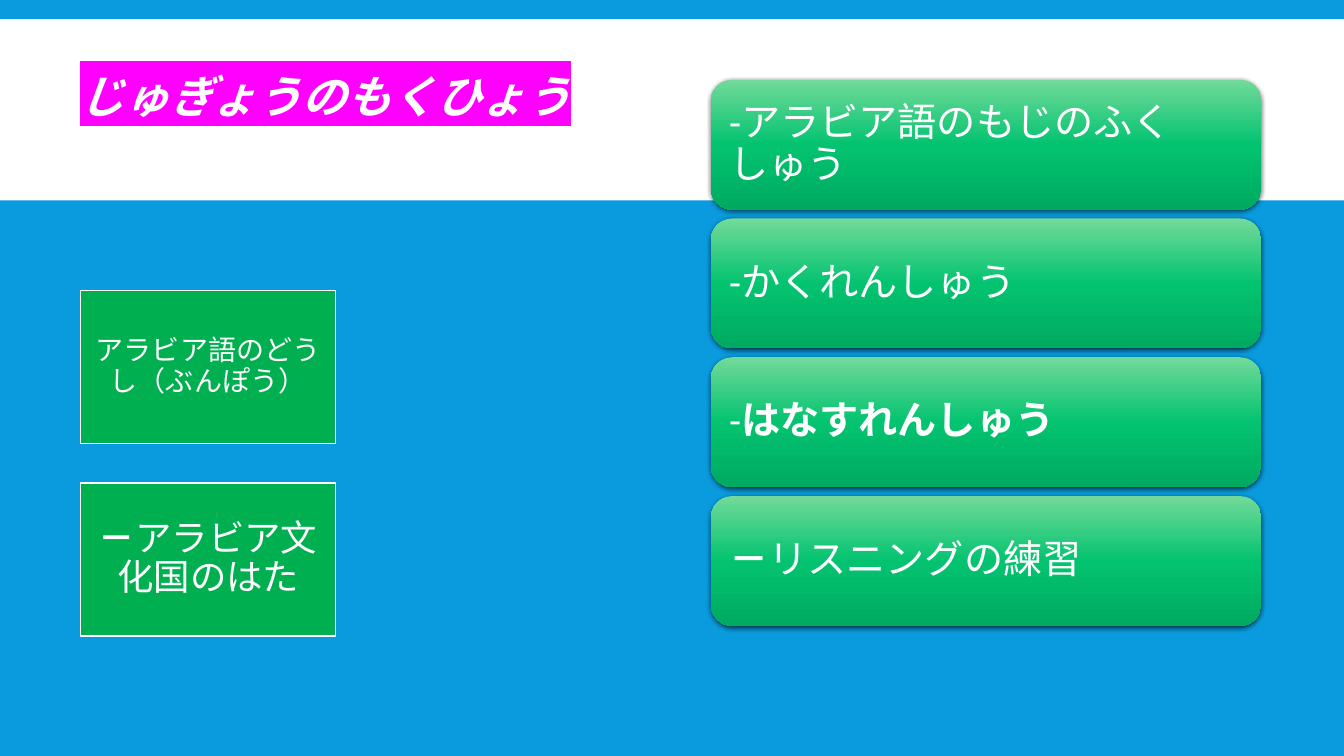
from copy import deepcopy
from dataclasses import dataclass

from lxml.etree import SubElement
from pptx import Presentation
from pptx.dml.color import RGBColor
from pptx.enum.shapes import MSO_SHAPE as Shape
from pptx.enum.text import MSO_ANCHOR as Anchor, PP_ALIGN as Align
from pptx.oxml.ns import qn
from pptx.util import Inches, Pt

COLOURS = {
    "sky": "099BDD", "white": "FFFFFF", "magenta": "FF00FF", "green": "00B050",
    "mint": "72DA9A", "emerald": "03C370", "forest": "00AA61", "black": "000000",
}
FONT = "Calibri"
WIDTH, HEIGHT = Inches(13.33), Inches(7.5)


@dataclass(frozen=True)
class Box:
    """Place and size in percent of the slide's width and height."""
    left: float
    top: float
    width: float
    height: float

    def emu(self) -> tuple[int, int, int, int]:
        return (int(self.left * WIDTH / 100), int(self.top * HEIGHT / 100),
                int(self.width * WIDTH / 100), int(self.height * HEIGHT / 100))


@dataclass(frozen=True)
class Phrase:
    text: str
    bold: bool = False


@dataclass(frozen=True)
class Topic:
    phrases: tuple[Phrase, ...]
    size: int
    border: float = 0


GOALS = (
    Topic((Phrase("-アラビア語のもじのふくしゅう"),), 28),
    Topic((Phrase("-かくれんしゅう"),), 28),
    Topic((Phrase("-"), Phrase("はなすれんしゅう", True)), 28),
    Topic((Phrase("－", True), Phrase("リスニングの練習")), 28),
)
EXTRAS = (
    Topic((Phrase("アラビア語のどうし（ぶんぽう）"),), 20, 0.5),
    Topic((Phrase("－", True), Phrase("アラビア文化国のはた")), 26, 1),
)
FIRST_GOAL, GOAL_STEP = Box(52.89, 10.53, 40.96, 17.2), 18.36
FIRST_EXTRA, EXTRA_STEP = Box(6, 38.4, 18.98, 20.27), 25.47


def rgb(name: str) -> RGBColor:
    return RGBColor.from_string(COLOURS[name])


def below(first: Box, step: float, index: int) -> Box:
    return Box(first.left, first.top + index * step, first.width, first.height)


def set_insets(frame, inset: float) -> None:
    frame.word_wrap = True
    frame.margin_left = frame.margin_right = Inches(inset)
    frame.margin_top = frame.margin_bottom = Inches(inset)


def style_run(run, size: int, bold: bool) -> None:
    run.font.size = Pt(size)
    run.font.bold = bold
    run.font.name = FONT
    run.font.color.rgb = rgb("white")


def add_panel(slide, kind: Shape, box: Box, fill: str, border: float = 0):
    panel = slide.shapes.add_shape(kind, *box.emu())
    panel.shadow.inherit = False
    panel.fill.solid()
    panel.fill.fore_color.rgb = rgb(fill)
    if border:
        panel.line.color.rgb = rgb("white")
        panel.line.width = Pt(border)
    else:
        panel.line.fill.background()
    return panel


def write_topic(panel, topic: Topic, inset: float, align: Align) -> None:
    frame = panel.text_frame
    set_insets(frame, inset)
    frame.vertical_anchor = Anchor.MIDDLE
    paragraph = frame.paragraphs[0]
    paragraph.alignment = align
    paragraph.line_spacing = 0.9
    paragraph.space_after = Pt(round(0.35 * topic.size))
    paragraph.text = topic.phrases[0].text
    for phrase in topic.phrases[1:]:
        paragraph.add_run().text = phrase.text
    for run, phrase in zip(paragraph.runs, topic.phrases):
        style_run(run, topic.size, phrase.bold)


def shade_green(panel) -> None:
    """Three-stop gradient, light at the top, with a soft shadow below."""
    panel.fill.gradient()
    panel.fill.gradient_angle = 270
    properties = panel._element.spPr
    stops = properties.find(".//" + qn("a:gsLst"))
    stops.insert(1, deepcopy(stops[0]))
    shades = ((0, "mint"), (0.5, "emerald"), (1, "forest"))
    for stop, (position, shade) in zip(panel.fill.gradient_stops, shades):
        stop.position = position
        stop.color.rgb = rgb(shade)
    shadow = SubElement(properties.find(qn("a:effectLst")), qn("a:outerShdw"),
                        blurRad=str(Pt(4)), dist=str(Pt(1.2)),
                        dir="5400000", algn="ctr", rotWithShape="0")
    tone = SubElement(shadow, qn("a:srgbClr"), val=COLOURS["black"])
    SubElement(tone, qn("a:alpha"), val="68000")


def add_heading(slide) -> None:
    heading = slide.shapes.add_textbox(*Box(5.93, 9.07, 41.19, 21.47).emu())
    frame = heading.text_frame
    set_insets(frame, 0)
    frame.text = "じゅぎょうのもくひょう"
    frame.paragraphs[0].space_after = Pt(6)
    run = frame.paragraphs[0].runs[0]
    style_run(run, 32, True)
    run.font.italic = True
    # The highlight belongs right after the text colour
    properties = run.font._element
    highlight = SubElement(properties, qn("a:highlight"))
    SubElement(highlight, qn("a:srgbClr"), val=COLOURS["magenta"])
    properties.find(qn("a:solidFill")).addnext(highlight)


def main() -> None:
    deck = Presentation()
    deck.slide_width, deck.slide_height = WIDTH, HEIGHT
    slide = deck.slides.add_slide(deck.slide_layouts[6])

    # Background and title band
    slide.background.fill.solid()
    slide.background.fill.fore_color.rgb = rgb("sky")
    add_panel(slide, Shape.RECTANGLE, Box(0, 2.53, 100, 24), "white")
    add_heading(slide)

    # Lesson goals on the right
    for index, goal in enumerate(GOALS):
        card = add_panel(slide, Shape.ROUNDED_RECTANGLE,
                         below(FIRST_GOAL, GOAL_STEP, index), "emerald")
        shade_green(card)
        write_topic(card, goal, 0.12, Align.LEFT)

    # Extra topics on the left
    for index, extra in enumerate(EXTRAS):
        tile = add_panel(slide, Shape.RECTANGLE,
                         below(FIRST_EXTRA, EXTRA_STEP, index), "green", extra.border)
        write_topic(tile, extra, 0.08, Align.CENTER)

    deck.save("out.pptx")


if __name__ == "__main__":
    main()
